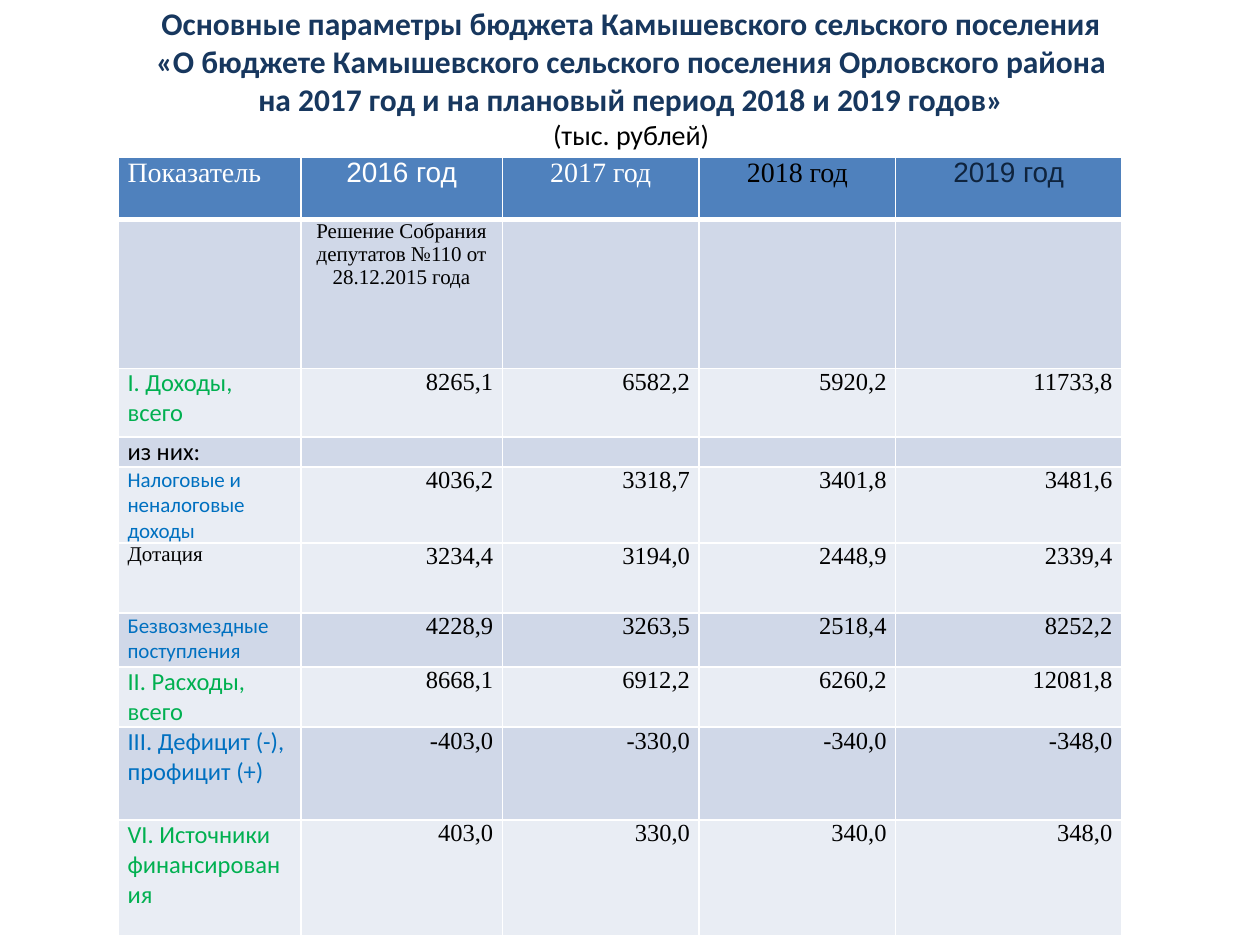
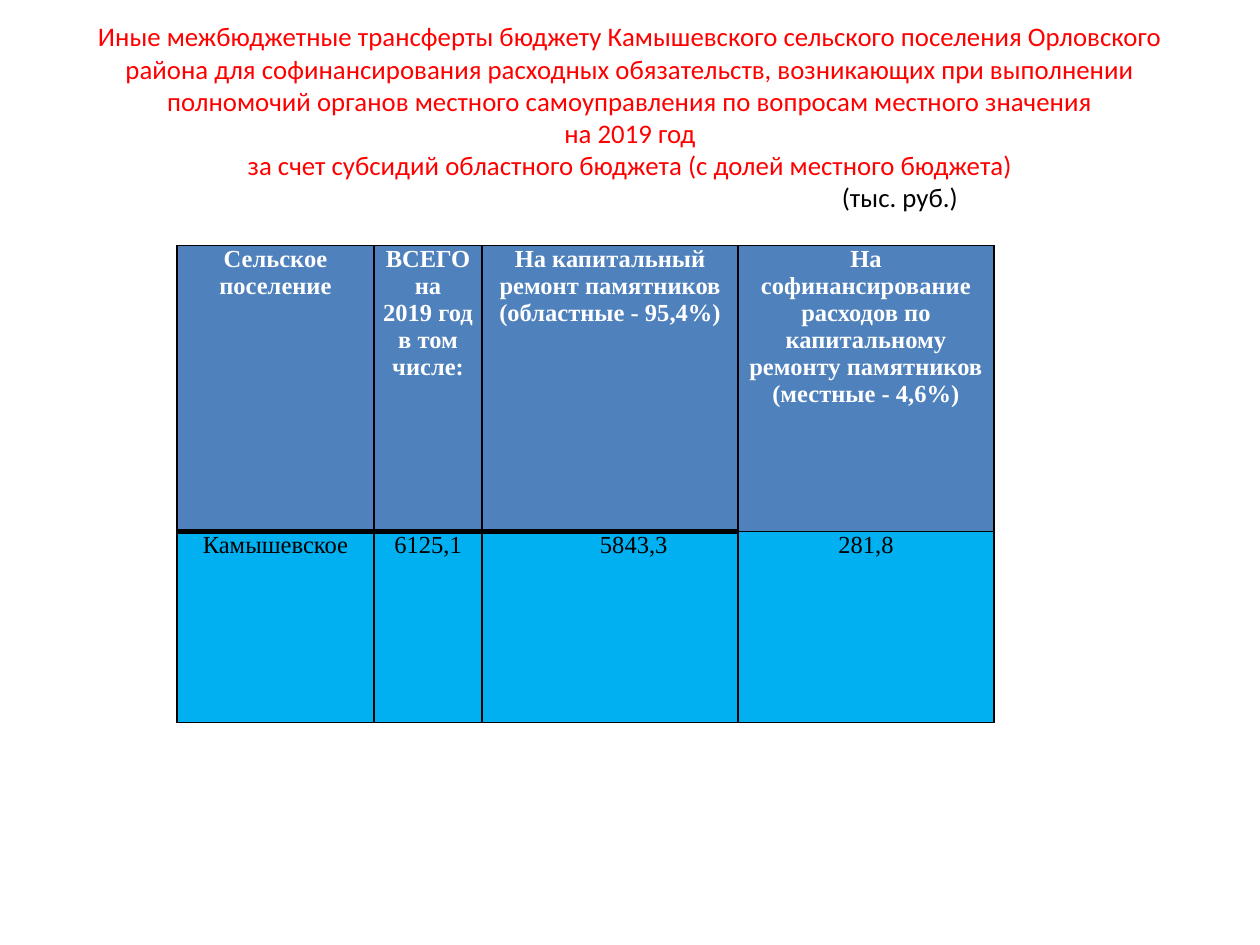
from lxml import etree
from pptx import Presentation
from pptx.dml.color import RGBColor
from pptx.enum.text import MSO_ANCHOR, PP_ALIGN
from pptx.oxml.ns import qn
from pptx.util import Pt

LEFT, CENTER, RIGHT = PP_ALIGN.LEFT, PP_ALIGN.CENTER, PP_ALIGN.RIGHT
MIDDLE = MSO_ANCHOR.MIDDLE

WHITE = RGBColor(0xFF, 0xFF, 0xFF)
BLACK = RGBColor(0, 0, 0)
NAVY = RGBColor(0x17, 0x37, 0x5E)
DARK_NAVY = RGBColor(0x0F, 0x24, 0x3E)
HEADER_BLUE = RGBColor(0x4F, 0x81, 0xBD)
BAND_DARK = RGBColor(0xD0, 0xD8, 0xE8)
BAND_LIGHT = RGBColor(0xE9, 0xED, 0xF4)
GREEN = RGBColor(0, 0xB0, 0x50)
BLUE = RGBColor(0, 0x70, 0xC0)
SKY = RGBColor(0, 0xB0, 0xF0)
RED = RGBColor(0xFF, 0, 0)

SANS, SERIF, ARIAL = "Calibri", "Times New Roman", "Arial"
THIN, THICK = 1, 3

BUDGET_HEADERS = [
    ("Показатель", SERIF, WHITE), ("2016 год", ARIAL, WHITE),
    ("2017 год", SERIF, WHITE), ("2018 год", SERIF, BLACK),
    ("2019 год", ARIAL, DARK_NAVY),
]
DECISION = "Решение Собрания депутатов №110 от 28.12.2015 года"
# label, font, size, colour, band, row height, values
BUDGET_ROWS = [
    ("I. Доходы, всего", SANS, 14, GREEN, BAND_LIGHT, 39.4,
     ["8265,1", "6582,2", "5920,2", "11733,8"]),
    ("из них:", SANS, 14, BLACK, BAND_DARK, 17.1, [""] * 4),
    ("Налоговые и неналоговые доходы", SANS, 12, BLUE, BAND_LIGHT, 43.4,
     ["4036,2", "3318,7", "3401,8", "3481,6"]),
    ("Дотация", SERIF, 12, BLACK, BAND_LIGHT, 40,
     ["3234,4", "3194,0", "2448,9", "2339,4"]),
    ("Безвозмездные поступления", SANS, 12, BLUE, BAND_DARK, 30.9,
     ["4228,9", "3263,5", "2518,4", "8252,2"]),
    ("II. Расходы, всего", SANS, 14, GREEN, BAND_LIGHT, 34.3,
     ["8668,1", "6912,2", "6260,2", "12081,8"]),
    ("III. Дефицит (-), профицит (+)", SANS, 14, BLUE, BAND_DARK, 53.1,
     ["-403,0", "-330,0", "-340,0", "-348,0"]),
    ("VI. Источники финансирования", SANS, 14, GREEN, BAND_LIGHT, 66.3,
     ["403,0", "330,0", "340,0", "348,0"]),
]
# header, value, left indent of the value
TRANSFERS = [
    ("Сельское\nпоселение", "Камышевское", 0),
    ("ВСЕГО\nна\n2019 год\nв том числе:", "6125,1", 0),
    ("На капитальный ремонт памятников\n(областные - 95,4%)", "5843,3", 27),
    ("На софинансирование расходов по капитальному ремонту памятников\n"
     "(местные - 4,6%)", "281,8", 0),
]


def style(paragraph, font, size, color, bold=False, align=LEFT, indent=0):
    paragraph.alignment = align
    if indent:
        paragraph._p.get_or_add_pPr().set("marL", str(Pt(indent)))
    for run in paragraph.runs:
        run.font.name = font
        run.font.size = Pt(size)
        run.font.color.rgb = color
        run.font.bold = bold
    if not paragraph.runs:
        # keeps the height of an empty cell down
        etree.SubElement(paragraph._p, qn("a:endParaRPr"), sz=str(size * 100))


def add_title(slide, box, lines):
    """Each line is its text followed by the arguments of style()."""
    title = slide.shapes.add_textbox(*map(Pt, box)).text_frame
    title.word_wrap = True
    title.vertical_anchor = MIDDLE
    title.text = "\n".join(line[0] for line in lines)
    for paragraph, line in zip(title.paragraphs, lines):
        style(paragraph, *line[1:])


def add_grid(slide, left, top, widths, heights):
    frame = slide.shapes.add_table(len(heights), len(widths), Pt(left), Pt(top),
                                   Pt(sum(widths)), Pt(sum(heights)))
    grid = frame.table
    grid.first_row = grid.horz_banding = False
    for column, width in zip(grid.columns, widths):
        column.width = Pt(width)
    for row, height in zip(grid.rows, heights):
        row.height = Pt(height)
    return grid


def fill_cell(cell, text, fill, border, inset, top=THIN, bottom=THIN, **look):
    cell.margin_left = cell.margin_right = Pt(inset)
    cell.margin_top = cell.margin_bottom = 0
    edges = {"a:lnL": THIN, "a:lnR": THIN, "a:lnT": top, "a:lnB": bottom}
    for tag, width in edges.items():
        line = etree.SubElement(cell._tc.get_or_add_tcPr(), qn(tag), w=str(Pt(width)))
        solid = etree.SubElement(line, qn("a:solidFill"))
        etree.SubElement(solid, qn("a:srgbClr"), val=str(border))
    cell.fill.solid()
    cell.fill.fore_color.rgb = fill
    cell.text_frame.text = text
    for paragraph in cell.text_frame.paragraphs:
        style(paragraph, **look)


def budget_table(slide, left, top):
    heights = [35.4, 85.1] + [row[5] for row in BUDGET_ROWS]
    grid = add_grid(slide, left, top, [104.2, 115.2, 112.4, 112.4, 129], heights)
    frame = dict(border=WHITE, inset=5.2)

    # Years and the decision below them
    for col, (text, font, color) in enumerate(BUDGET_HEADERS):
        fill_cell(grid.cell(0, col), text, HEADER_BLUE, bottom=THICK, font=font,
                  size=16, color=color, align=CENTER if col else LEFT, **frame)
        fill_cell(grid.cell(1, col), DECISION if col == 1 else "", BAND_DARK,
                  top=THICK, font=SERIF, size=12, color=BLACK, align=CENTER, **frame)

    # Indicators
    for row, (label, font, size, color, band, _, values) in enumerate(BUDGET_ROWS, 2):
        fill_cell(grid.cell(row, 0), label, band, font=font, size=size,
                  color=color, **frame)
        for col, value in enumerate(values, 1):
            fill_cell(grid.cell(row, col), value, band, font=SERIF, size=14,
                      color=BLACK, align=RIGHT, **frame)


def transfers_table(slide, left, top):
    grid = add_grid(slide, left, top, [112.5, 61.9, 146.2, 146.2], [163.2, 109.2])
    shared = dict(border=BLACK, inset=3.6, font=SERIF, size=14, align=CENTER)
    for col, (header, value, indent) in enumerate(TRANSFERS):
        divider = THIN if col == len(TRANSFERS) - 1 else THICK
        fill_cell(grid.cell(0, col), header, HEADER_BLUE, bottom=divider,
                  color=WHITE, bold=True, **shared)
        fill_cell(grid.cell(1, col), value, SKY, top=divider, color=BLACK,
                  indent=indent, **shared)


def budget_slide(slide):
    heading = (SANS, 18, NAVY, True, CENTER)
    add_title(slide, (36.7, 0, 648, 88.6), [
        ("Основные параметры бюджета Камышевского сельского поселения", *heading),
        ("«О бюджете Камышевского сельского поселения Орловского района", *heading),
        ("на 2017 год и на плановый период 2018 и 2019 годов»", *heading),
        ("(тыс. рублей)", SANS, 16, BLACK, False, CENTER),
    ])
    budget_table(slide, 67.7, 90)


def transfers_slide(slide):
    heading = (SANS, 15.3, RED, False, CENTER)
    add_title(slide, (36, 21.6, 648, 90), [
        ("Иные межбюджетные трансферты бюджету Камышевского сельского поселения "
         "Орловского района для софинансирования расходных обязательств, "
         "возникающих при выполнении полномочий органов местного самоуправления "
         "по вопросам местного значения", *heading),
        ("на 2019 год", *heading),
        ("за счет субсидий областного бюджета (с долей местного бюджета)", *heading),
        ("(тыс. руб.)", SANS, 15.3, BLACK, False, LEFT, 438),
    ])
    transfers_table(slide, 101.2, 140.4)


def main():
    deck = Presentation()
    deck.slide_width, deck.slide_height = Pt(720), Pt(540)
    blank = deck.slide_layouts[6]
    for build in (budget_slide, transfers_slide):
        build(deck.slides.add_slide(blank))
    deck.save("out.pptx")


if __name__ == "__main__":
    main()
